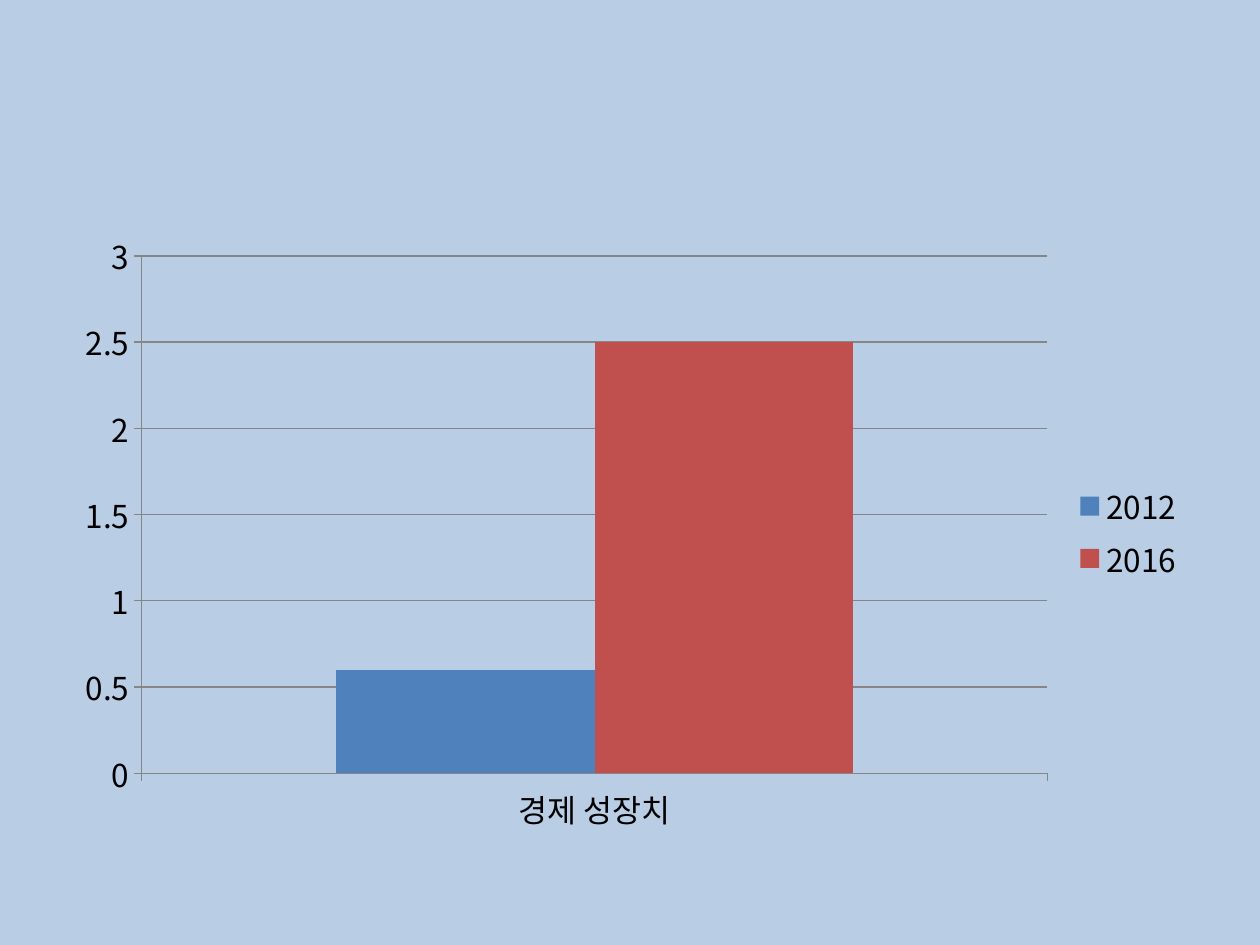
from lxml import etree
from pptx import Presentation
from pptx.chart.data import CategoryChartData
from pptx.dml.color import RGBColor
from pptx.enum import chart as ch
from pptx.oxml.ns import qn
from pptx.util import Inches, Pt

FONT = "Noto Sans CJK KR"
BACKGROUND = RGBColor(0xB9, 0xCD, 0xE5)
BLACK = RGBColor(0, 0, 0)
GRAY = RGBColor(0x86, 0x86, 0x86)
BLUE = RGBColor(0x4F, 0x81, 0xBD)
RED = RGBColor(0xC0, 0x50, 0x4D)

CATEGORIES = ["경제 성장치"]
GROWTH = [("2012", [0.6], BLUE), ("2016", [2.5], RED)]


def style_text(chart):
    chart.font.name = FONT
    chart.font.size = Pt(18)
    chart.font.color.rgb = BLACK
    # The Korean label takes its font from the East Asian typeface.
    for latin in chart.element.iter(qn("a:latin")) if hasattr(chart, "element") else chart._chartSpace.iter(qn("a:latin")):
        east_asian = etree.Element(qn("a:ea"), typeface=FONT)
        latin.addnext(east_asian)


def style_axes(chart):
    for axis in (chart.category_axis, chart.value_axis):
        axis.major_tick_mark = ch.XL_TICK_MARK.OUTSIDE
        axis.minor_tick_mark = ch.XL_TICK_MARK.NONE
        axis.format.line.color.rgb = GRAY
        axis.format.line.width = Pt(0.75)
    values = chart.value_axis
    values.minimum_scale, values.maximum_scale, values.major_unit = 0, 3, 0.5
    values.has_major_gridlines = True
    values.major_gridlines.format.line.color.rgb = GRAY
    values.major_gridlines.format.line.width = Pt(0.75)
    values.tick_labels.number_format = "General"
    values.tick_labels.number_format_is_linked = False


def add_growth_chart(page, left, top, width, height):
    data = CategoryChartData()
    data.categories = CATEGORIES
    for name, values, _ in GROWTH:
        data.add_series(name, values)
    chart = page.shapes.add_chart(
        ch.XL_CHART_TYPE.COLUMN_CLUSTERED, left, top, width, height, data
    ).chart
    chart.has_title = False
    chart.has_legend = True
    chart.legend.position = ch.XL_LEGEND_POSITION.RIGHT
    chart.legend.include_in_layout = False

    plot = chart.plots[0]
    plot.gap_width = 150
    plot.overlap = 0
    plot.vary_by_categories = False
    for series, (_, _, color) in zip(plot.series, GROWTH):
        series.format.fill.solid()
        series.format.fill.fore_color.rgb = color
    style_axes(chart)
    style_text(chart)


def main():
    deck = Presentation()
    deck.slide_width, deck.slide_height = Inches(10), Inches(7.5)
    page = deck.slides.add_slide(deck.slide_layouts[6])
    page.background.fill.solid()
    page.background.fill.fore_color.rgb = BACKGROUND
    add_growth_chart(page, Inches(0.5), Inches(1.75), Inches(9), Inches(4.95))
    deck.save("out.pptx")


if __name__ == "__main__":
    main()
